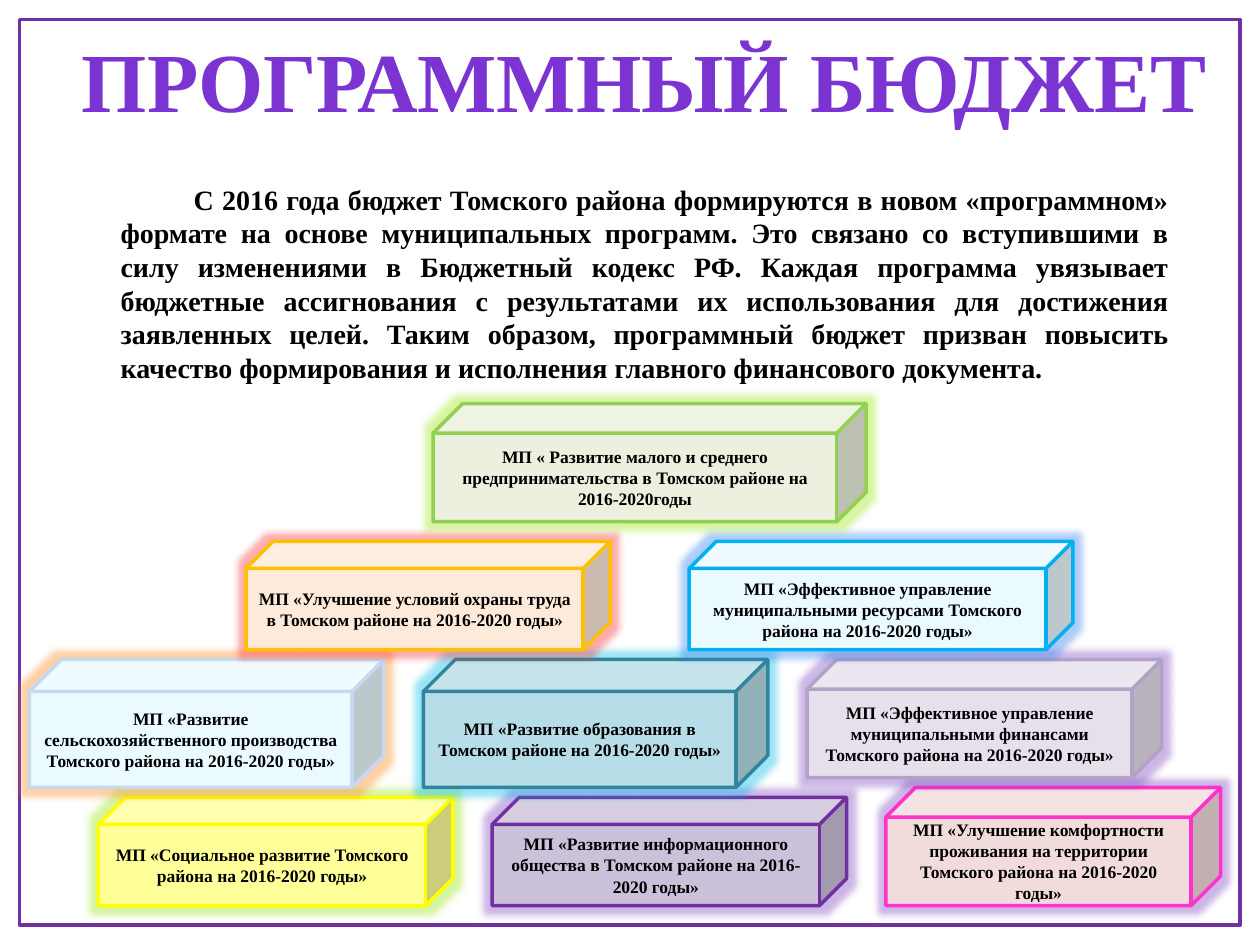
from lxml.etree import SubElement
from pptx import Presentation
from pptx.dml.color import RGBColor
from pptx.enum.shapes import MSO_SHAPE
from pptx.enum.text import MSO_ANCHOR, PP_ALIGN
from pptx.oxml.ns import qn
from pptx.util import Inches, Pt

WIDTH, HEIGHT = Inches(10), Inches(7.5)
CELL = WIDTH / 128  # square grid: 128 columns by 96 rows
FONT = "Times New Roman"

BLACK = RGBColor(0x00, 0x00, 0x00)
VIOLET = RGBColor(0x7B, 0x34, 0xD2)
PURPLE = RGBColor(0x70, 0x30, 0xA0)
GLOW_GREEN = RGBColor(0x9B, 0xE6, 0x14)
GLOW_RED = RGBColor(0xF8, 0x30, 0x30)
GLOW_BLUE = RGBColor(0x30, 0x80, 0xF0)
GLOW_ORANGE = RGBColor(0xFF, 0x88, 0x20)
GLOW_CYAN = RGBColor(0x00, 0xBC, 0xEC)
GLOW_PURPLE = RGBColor(0x80, 0x48, 0xC0)

TITLE = "ПРОГРАММНЫЙ БЮДЖЕТ"
INTRODUCTION = (
    "С 2016 года бюджет Томского района формируются в новом «программном» формате "
    "на основе муниципальных программ. Это связано со вступившими в силу изменениями "
    "в Бюджетный кодекс РФ. Каждая программа увязывает бюджетные ассигнования с "
    "результатами их использования для достижения заявленных целей. Таким образом, "
    "программный бюджет призван повысить качество формирования и исполнения главного "
    "финансового документа."
)

# Text, (column, row, columns, rows), fill, line, glow; from back to front
PROGRAMMES = [
    ("МП «Развитие информационного общества в Томском районе на 2016-2020 годы»",
     (50, 81, 36, 11), RGBColor(0xCC, 0xC1, 0xDA), PURPLE, GLOW_PURPLE),
    ("МП «Улучшение комфортности проживания на территории Томского района на 2016-2020 годы»",
     (90, 80, 34, 12), RGBColor(0xF2, 0xDC, 0xDB), RGBColor(0xFF, 0x33, 0xCC), GLOW_PURPLE),
    ("МП «Социальное развитие Томского района на 2016-2020 годы»",
     (10, 81, 36, 11), RGBColor(0xFF, 0xFF, 0x99), RGBColor(0xFF, 0xFF, 0x00), GLOW_GREEN),
    ("МП «Развитие сельскохозяйственного производства Томского района на 2016-2020 годы»",
     (3, 67, 36, 13), RGBColor(0xEB, 0xFA, 0xFF), RGBColor(0xC6, 0xD9, 0xF1), GLOW_ORANGE),
    ("МП «Развитие образования в Томском районе на 2016-2020 годы»",
     (43, 67, 35, 13), RGBColor(0xB7, 0xDE, 0xE8), RGBColor(0x31, 0x85, 0x9C), GLOW_CYAN),
    ("МП «Эффективное управление муниципальными финансами Томского района на 2016-2020 годы»",
     (82, 67, 36, 12), RGBColor(0xE6, 0xE0, 0xEC), RGBColor(0xB3, 0xA2, 0xC7), GLOW_PURPLE),
    ("МП «Улучшение условий охраны труда в Томском районе на 2016-2020 годы»",
     (25, 55, 37, 11), RGBColor(0xFD, 0xEA, 0xDA), RGBColor(0xFF, 0xC0, 0x00), GLOW_RED),
    ("МП «Эффективное управление муниципальными ресурсами Томского района на 2016-2020 годы»",
     (70, 55, 39, 11), RGBColor(0xEB, 0xFA, 0xFF), RGBColor(0x00, 0xB0, 0xF0), GLOW_BLUE),
    ("МП « Развитие малого и среднего предпринимательства в Томском районе на 2016-2020годы",
     (44, 41, 44, 12), RGBColor(0xEB, 0xF1, 0xDE), RGBColor(0x92, 0xD0, 0x50), GLOW_GREEN),
]


def grid(box):
    """Turn columns and rows into slide lengths."""
    return [round(cells * CELL) for cells in box]


def write(shape, text, size, color, alignment):
    frame = shape.text_frame
    frame.text = text
    frame.word_wrap = True
    frame.vertical_anchor = MSO_ANCHOR.MIDDLE
    paragraph = frame.paragraphs[0]
    paragraph.alignment = alignment
    font = paragraph.runs[0].font
    font.name, font.size, font.bold = FONT, Pt(size), True
    font.color.rgb = color
    return paragraph


def add_glow(shape, color):
    shape.shadow.inherit = False
    effects = shape._element.spPr.find(qn("a:effectLst"))
    glow = SubElement(effects, qn("a:glow"), rad=str(Pt(8)))
    tint = SubElement(glow, qn("a:srgbClr"), val=str(color))
    SubElement(tint, qn("a:alpha"), val="40000")


def add_frame(slide, box):
    frame = slide.shapes.add_shape(MSO_SHAPE.RECTANGLE, *grid(box))
    frame.shadow.inherit = False
    frame.fill.background()
    frame.line.color.rgb = PURPLE
    frame.line.width = Pt(2)


def place_title(slide, box):
    title = slide.shapes.title
    title.left, title.top, title.width, title.height = grid(box)
    write(title, TITLE, 48, VIOLET, PP_ALIGN.CENTER)


def add_introduction(slide, box):
    textbox = slide.shapes.add_textbox(*grid(box))
    paragraph = write(textbox, INTRODUCTION, 16, BLACK, PP_ALIGN.JUSTIFY)
    paragraph._p.get_or_add_pPr().set("indent", str(Inches(0.58)))


def add_programme(slide, text, box, fill, line, glow):
    cube = slide.shapes.add_shape(MSO_SHAPE.CUBE, *grid(box))
    cube.fill.solid()
    cube.fill.fore_color.rgb = fill
    cube.line.color.rgb = line
    cube.line.width = Pt(2)
    add_glow(cube, glow)
    write(cube, text, 10, BLACK, PP_ALIGN.CENTER)


def main():
    presentation = Presentation()
    presentation.slide_width, presentation.slide_height = WIDTH, HEIGHT
    slide = presentation.slides.add_slide(presentation.slide_layouts[5])
    add_frame(slide, (2, 2, 124, 92))
    place_title(slide, (6, 2, 119, 12))
    add_introduction(slide, (11, 17.5, 109, 22.5))
    for programme in PROGRAMMES:
        add_programme(slide, *programme)
    presentation.save("out.pptx")


if __name__ == "__main__":
    main()
